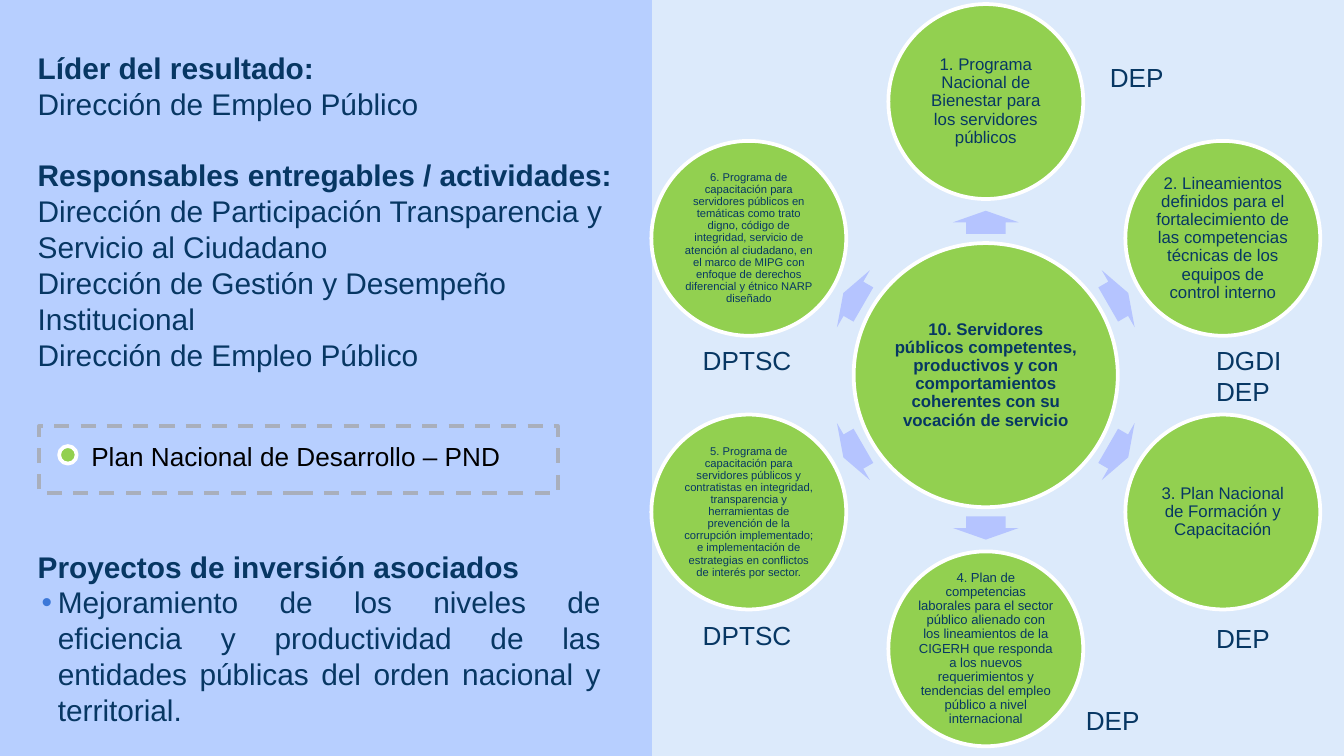
from math import cos, radians, sin

from lxml.etree import SubElement
from pptx import Presentation
from pptx.dml.color import RGBColor
from pptx.enum.dml import MSO_LINE
from pptx.enum.shapes import MSO_SHAPE
from pptx.enum.text import MSO_ANCHOR, MSO_AUTO_SIZE, PP_ALIGN
from pptx.oxml.ns import qn
from pptx.util import Pt

COLORS = {
    "background": "DCEAFB", "panel": "B7CFFF", "circle": "92D050", "outline": "FFFFFF",
    "arrow": "B5C4FF", "text": "073763", "bullet": "3C78D8", "dash": "A9AFBC", "legend": "000000",
}
FONT = "Arial"
GAP = 19.2

RESULT = ("10. Servidores públicos competentes, productivos y con comportamientos "
          "coherentes con su vocación de servicio")

# Clockwise from the top: text, size
DELIVERABLES = [
    ("1. Programa Nacional de Bienestar para los servidores públicos", 9),
    ("2. Lineamientos definidos para el fortalecimiento de las competencias técnicas "
     "de los equipos de control interno", 9),
    ("3. Plan Nacional de Formación y Capacitación", 9),
    ("4. Plan de competencias laborales para el sector público alienado con los "
     "lineamientos de la CIGERH que responda a los nuevos requerimientos y tendencias "
     "del empleo público a nivel internacional", 7),
    ("5. Programa de capacitación para servidores públicos y contratistas en integridad, "
     "transparencia y herramientas de prevención de la corrupción implementado; e "
     "implementación de estrategias en conflictos de interés por sector.", 6),
    ("6. Programa de capacitación para servidores públicos en temáticas como trato digno, "
     "código de integridad, servicio de atención al ciudadano, en el marco de MIPG con "
     "enfoque de derechos diferencial y étnico NARP diseñado", 6),
]

# Left, top, lines
AREA_LABELS = [
    (587.5, 29.5, ["DEP"]),
    (644.4, 180.7, ["DGDI", "DEP"]),
    (644.4, 329.8, ["DEP"]),
    (574.6, 373.7, ["DEP"]),
    (369.4, 328.3, ["DPTSC"]),
    (369.4, 180.7, ["DPTSC"]),
]

# Each paragraph is a list of lines: text, bold
RESPONSIBLES = [
    [("Líder del resultado:", True)],
    [("Dirección de Empleo Público", False)],
    [("Responsables entregables / actividades:", True),
     ("Dirección de Participación Transparencia y", False),
     ("Servicio al Ciudadano", False)],
    [("Dirección de Gestión y Desempeño", False)],
    [("Institucional", False)],
    [("Dirección de Empleo Público", False)],
]
PROJECTS = [
    [("Proyectos de inversión asociados", True)],
    [("Mejoramiento de los niveles de eficiencia y productividad de las entidades "
      "públicas del orden nacional y territorial.", False)],
]


def rgb(name):
    return RGBColor.from_string(COLORS[name])


def add_figure(page, kind, box, fill=None, line=None):
    figure = page.shapes.add_shape(kind, *(Pt(length) for length in box))
    figure.shadow.inherit = False
    if fill:
        figure.fill.solid()
        figure.fill.fore_color.rgb = rgb(fill)
    else:
        figure.fill.background()
    if line:
        figure.line.color.rgb = rgb(line)
        figure.line.width = Pt(2)
    else:
        figure.line.fill.background()
    return figure


def add_span(para, text, size, bold=False, color="text"):
    span = para.add_run()
    span.text = text
    span.font.name = FONT
    span.font.size = Pt(size)
    span.font.bold = bold
    span.font.color.rgb = rgb(color)


def place(holder, box):
    """Moves a placeholder to the box and brings it to the front."""
    holder.left, holder.top, holder.width, holder.height = (Pt(length) for length in box)
    holder.text_frame.auto_size = MSO_AUTO_SIZE.NONE
    holder.text_frame.word_wrap = True
    holder.element.getparent().append(holder.element)


def fill_circle_text(frame, text, size, bold=False):
    frame.margin_left = frame.margin_right = frame.margin_top = frame.margin_bottom = Pt(0.7)
    frame.vertical_anchor = MSO_ANCHOR.MIDDLE
    frame.word_wrap = True
    para = frame.paragraphs[0]
    para.alignment = PP_ALIGN.CENTER
    para.line_spacing = 0.9
    add_span(para, text, size, bold)


def set_bullet(para, char=None):
    properties = para._p.get_or_add_pPr()
    properties.set("marL", str(Pt(10.8) if char else 0))
    properties.set("indent", str(Pt(-8.64) if char else 0))
    if char:
        color = SubElement(properties, qn("a:buClr"))
        SubElement(color, qn("a:srgbClr"), val=COLORS["bullet"])
        SubElement(properties, qn("a:buFont"), typeface=FONT)
        SubElement(properties, qn("a:buChar"), char=char)
    else:
        SubElement(properties, qn("a:buNone"))


def fill_list(holder, box, paragraphs, bulleted=(), spaced=()):
    """Writes paragraphs; bulleted and spaced hold paragraph indexes."""
    place(holder, box)
    frame = holder.text_frame
    for index, lines in enumerate(paragraphs):
        para = frame.add_paragraph() if index else frame.paragraphs[0]
        set_bullet(para, "•" if index in bulleted else None)
        para.alignment = PP_ALIGN.JUSTIFY if index in bulleted else PP_ALIGN.LEFT
        para.space_before = Pt(GAP if index in spaced else 0)
        for number, (text, bold) in enumerate(lines):
            if number:
                para.add_line_break()
            add_span(para, text, 16, bold)


def add_label(page, box, lines, color="text"):
    label = page.shapes.add_textbox(*(Pt(length) for length in box))
    frame = label.text_frame
    frame.word_wrap = True
    for index, text in enumerate(lines):
        para = frame.add_paragraph() if index else frame.paragraphs[0]
        add_span(para, text, 14, color=color)


def add_legend(page, left, top, width, height):
    frame = add_figure(page, MSO_SHAPE.RECTANGLE, (left, top, width, height), line="dash")
    frame.line.dash_style = MSO_LINE.DASH
    add_label(page, (left + 20.9, top + 4.3, 260.6, 43.2),
              ["Plan Nacional de Desarrollo – PND"], "legend")
    add_figure(page, MSO_SHAPE.OVAL, (left + 10.8, top + 10.8, 9.4, 9.4), "circle", "outline")


def add_information_panel(page, box, responsibles, projects):
    left, top, width, height = box
    add_figure(page, MSO_SHAPE.RECTANGLE, box, "panel", "panel")
    fill_list(responsibles, (left + 13, top + 22.3, 363.6, 239.8), RESPONSIBLES, spaced=(2,))
    fill_list(projects, (left + 13, top + 289.4, 316.1, 104.4), PROJECTS, bulleted=(1,))
    add_legend(page, left + 20.9, top + 227.5, 277.9, 36)


def add_result_wheel(page, box, title):
    left, top, width, height = box
    middle_x, middle_y = left + width / 2, top + height / 2
    node = 104.4
    orbit = (height - node) / 2
    hub, hub_text = 141.5, 100.1

    def around(distance, angle, wide, high):
        x = middle_x + distance * cos(radians(angle))
        y = middle_y + distance * sin(radians(angle))
        return x - wide / 2, y - high / 2, wide, high

    add_figure(page, MSO_SHAPE.OVAL, around(0, 0, hub, hub), "circle", "outline")
    place(title, around(0, 0, hub_text, hub_text))
    fill_circle_text(title.text_frame, RESULT, 9, bold=True)

    for index, (text, size) in enumerate(DELIVERABLES):
        angle = 60 * index - 90
        arrow = add_figure(page, MSO_SHAPE.RIGHT_ARROW, around(81.9, angle, 12.4, 35.3), "arrow")
        arrow.adjustments[0], arrow.adjustments[1] = 0.6, 0.5
        arrow.rotation = angle % 360
        circle = add_figure(page, MSO_SHAPE.OVAL, around(orbit, angle, node, node),
                            "circle", "outline")
        fill_circle_text(circle.text_frame, text, size)


def main():
    deck = Presentation()
    deck.slide_width, deck.slide_height = Pt(720), Pt(405)
    page = deck.slides.add_slide(deck.slide_layouts[3])
    page.background.fill.solid()
    page.background.fill.fore_color.rgb = rgb("background")
    title, responsibles, projects = page.placeholders
    add_information_panel(page, (0, 0.7, 348.5, 404.6), responsibles, projects)
    add_result_wheel(page, (348.8, 2.2, 358.6, 397.6), title)
    for left, top, lines in AREA_LABELS:
        add_label(page, (left, top, 64.8, 7.2 + 17 * len(lines)), lines)
    deck.save("out.pptx")


if __name__ == "__main__":
    main()
